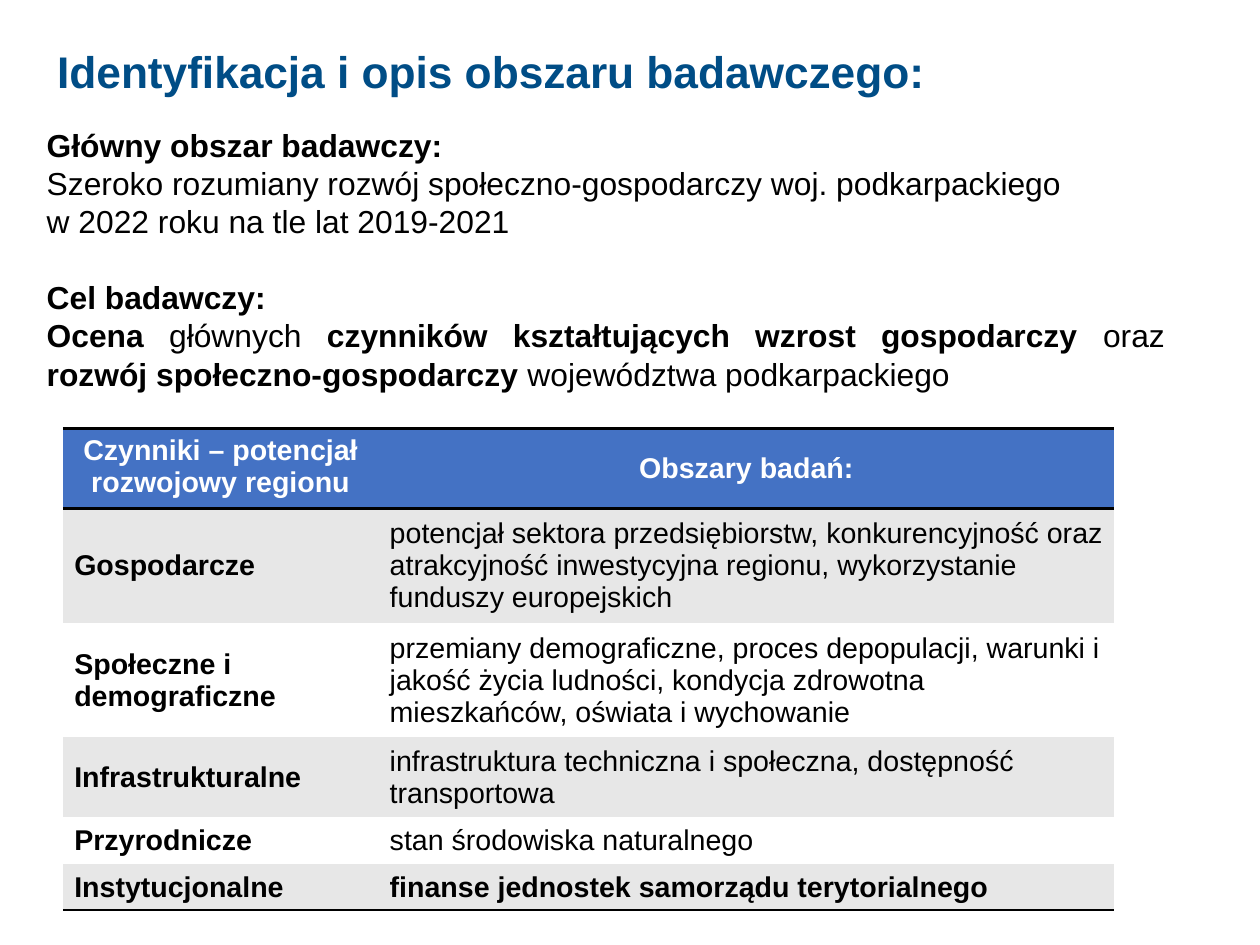
import pptx
import pptx.util
import pptx.dml.color
import pptx.enum.text
import pptx.oxml.ns
import lxml.etree

Inches = pptx.util.Inches
Mm = pptx.util.Mm
Pt = pptx.util.Pt
RGBColor = pptx.dml.color.RGBColor
PP_ALIGN = pptx.enum.text.PP_ALIGN
MSO_ANCHOR = pptx.enum.text.MSO_ANCHOR
qn = pptx.oxml.ns.qn

NAVY = RGBColor(0x00, 0x4D, 0x86)
BLUE = RGBColor(0x44, 0x72, 0xC4)
GREY = RGBColor(0xE7, 0xE7, 0xE7)
WHITE = RGBColor(0xFF, 0xFF, 0xFF)
BLACK = RGBColor(0x00, 0x00, 0x00)
PLAIN_TABLE_STYLE = "{2D5ABB26-0587-4C30-8999-92F81FD0307C}"


def add_run(paragraph, text, size, color, bold):
    run = paragraph.add_run()
    run.text = text
    run.font.name = "Arial"
    run.font.size = Pt(size)
    run.font.bold = bold
    run.font.color.rgb = color


def add_border(cell, side):
    """Draw a black 2 pt rule on one side of a cell: lnT or lnB."""
    border = lxml.etree.SubElement(
        cell._tc.get_or_add_tcPr(), qn(f"a:{side}"), w=str(Pt(2)))
    fill = lxml.etree.SubElement(border, qn("a:solidFill"))
    lxml.etree.SubElement(fill, qn("a:srgbClr"), val=str(BLACK))


presentation = pptx.Presentation()
presentation.slide_width = Mm(280)
presentation.slide_height = Mm(210)
# The default template labels its size as a 4:3 screen
presentation.element.find(qn("p:sldSz")).attrib.pop("type", None)
slide = presentation.slides.add_slide(presentation.slide_layouts[5])

# Title
title = slide.shapes.title
title.left, title.top = Inches(0.4), Inches(0.41)
title.width, title.height = Inches(9.51), Inches(0.6)
title.text_frame.vertical_anchor = MSO_ANCHOR.MIDDLE
title.text_frame.margin_bottom = Inches(0.17)
title.text_frame.word_wrap = True
paragraph = title.text_frame.paragraphs[0]
paragraph.alignment = PP_ALIGN.LEFT
paragraph.line_spacing = 0.9
add_run(paragraph, "Identyfikacja i opis obszaru badawczego:", 27.9, NAVY, True)

# Research area and aim: alignment, space before, (text, bold) runs
LEFT, JUSTIFY = PP_ALIGN.LEFT, PP_ALIGN.JUSTIFY
aims = [
    (LEFT, 0, [("Główny obszar badawczy:", True)]),
    (LEFT, 0, [
        ("Szeroko rozumiany rozwój społeczno-gospodarczy woj. podkarpackiego ", False),
        ("\n", False),
        ("w 2022 roku na tle lat 2019-2021", False)]),
    (JUSTIFY, 24, [("Cel badawczy:", True)]),
    (JUSTIFY, 0, [
        ("Ocena", True),
        (" głównych ", False),
        ("czynników kształtujących wzrost gospodarczy ", True),
        ("oraz ", False),
        ("rozwój społeczno-gospodarczy ", True),
        ("województwa podkarpackiego", False)]),
]
aims_box = slide.shapes.add_textbox(
    Inches(0.31), Inches(1.05), Inches(9.98), Inches(2.79))
aims_frame = aims_box.text_frame
aims_frame.word_wrap = True
for index, (alignment, space_before, runs) in enumerate(aims):
    paragraph = aims_frame.add_paragraph() if index else aims_frame.paragraphs[0]
    paragraph.alignment = alignment
    paragraph.line_spacing = Pt(24)
    paragraph.space_before = Pt(space_before)
    for text, bold in runs:
        if text == "\n":
            paragraph.add_line_break()
        else:
            add_run(paragraph, text, 20, BLACK, bold)

# Table of factors: row height, factor, research areas
factors = [
    (0.7, "Czynniki – potencjał rozwojowy regionu", "Obszary badań:"),
    (1.0, "Gospodarcze",
     "potencjał sektora przedsiębiorstw, konkurencyjność oraz atrakcyjność "
     "inwestycyjna regionu, wykorzystanie funduszy europejskich"),
    (1.0, "Społeczne i demograficzne",
     "przemiany demograficzne, proces depopulacji, warunki i jakość życia "
     "ludności, kondycja zdrowotna mieszkańców, oświata i wychowanie"),
    (0.7, "Infrastrukturalne",
     "infrastruktura techniczna i społeczna, dostępność transportowa"),
    (0.41, "Przyrodnicze", "stan środowiska naturalnego"),
    (0.4, "Instytucjonalne", "finanse jednostek samorządu terytorialnego"),
]
last_row = len(factors) - 1
table_frame = slide.shapes.add_table(
    len(factors), 2, Inches(0.55), Inches(3.75), Inches(9.2), Inches(4.21))
table = table_frame.table
table.horz_banding = False
table._tbl.tblPr.find(qn("a:tableStyleId")).text = PLAIN_TABLE_STYLE
for column, width in zip(table.columns, (2.76, 6.44)):
    column.width = Inches(width)

for row, (height, *texts) in enumerate(factors):
    table.rows[row].height = Inches(height)
    is_header = row == 0
    for column, text in enumerate(texts):
        cell = table.cell(row, column)
        if is_header:
            add_border(cell, "lnT")
        if row in (0, last_row):
            add_border(cell, "lnB")
        cell.fill.solid()
        cell.fill.fore_color.rgb = BLUE if is_header else GREY if row % 2 else WHITE
        cell.vertical_anchor = MSO_ANCHOR.MIDDLE
        paragraph = cell.text_frame.paragraphs[0]
        paragraph.alignment = PP_ALIGN.CENTER if is_header else PP_ALIGN.LEFT
        add_run(paragraph, text, 18, WHITE if is_header else BLACK,
                column == 0 or row in (0, last_row))
table.cell(0, 0).vertical_anchor = MSO_ANCHOR.TOP

presentation.save("out.pptx")
